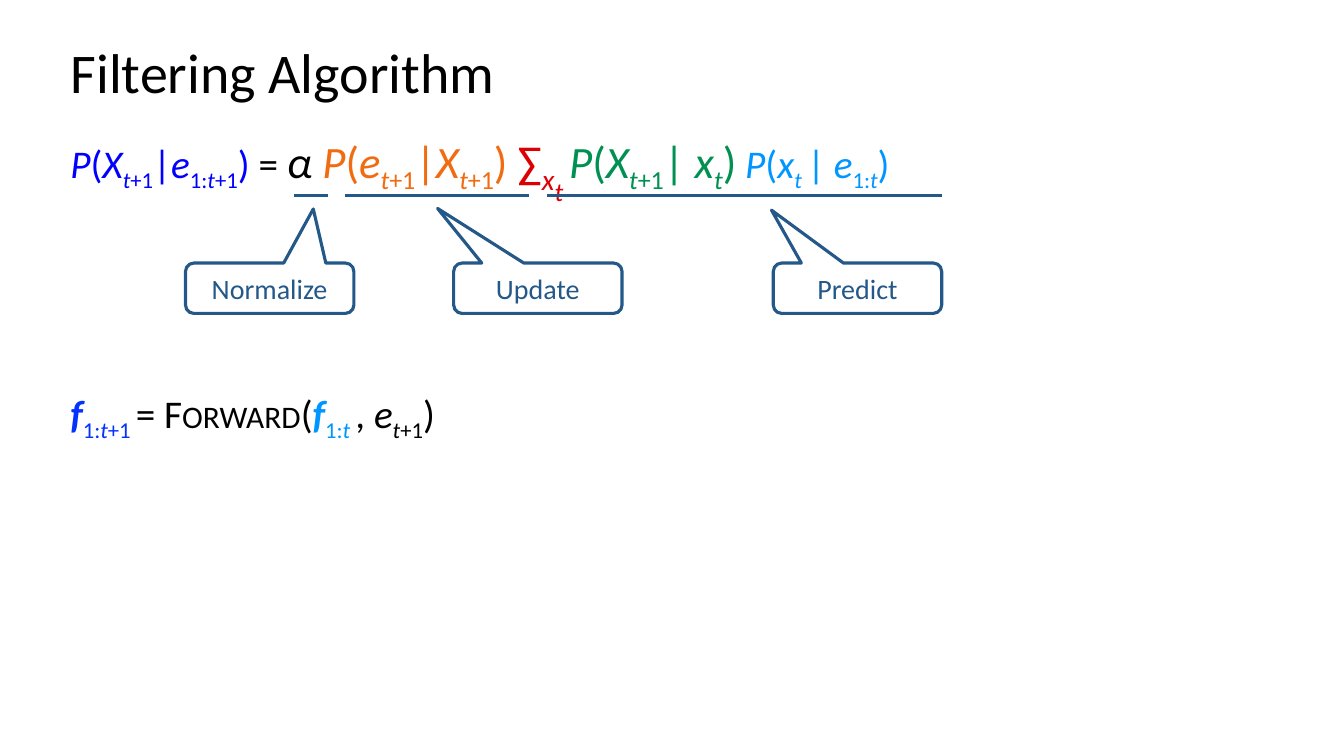
from dataclasses import dataclass
from itertools import groupby
from pptx import Presentation
from pptx.dml.color import RGBColor as RGB
from pptx.enum.shapes import MSO_CONNECTOR as LineKind, MSO_SHAPE as Preset
from pptx.enum.text import MSO_ANCHOR as Anchor, MSO_AUTO_SIZE as Fit, PP_ALIGN as Align
from pptx.oxml.ns import qn
from pptx.util import Inches, Pt


@dataclass(frozen=True)
class Theme:
    font: str = "Calibri"
    black: str = "000000"
    white: str = "FFFFFF"
    posterior: str = "0000FF"
    sensor: str = "F16C11"
    total: str = "DC0003"
    transition: str = "009051"
    prior: str = "0096FF"
    message: str = "0432FF"
    accent: str = "235888"
    title_size: int = 40
    index_size: int = 36
    large: int = 32
    body: int = 28
    label: int = 20
    stroke: float = 2.25


THEME = Theme()


@dataclass(frozen=True)
class Box:
    left: float
    top: float
    width: float
    height: float

    def inches(self):
        return [Inches(v) for v in (self.left, self.top, self.width, self.height)]


@dataclass(frozen=True)
class Term:
    """Part of a formula: letters are italic, [brackets] hold subscripts."""
    text: str
    colour: str = THEME.black
    size: int = THEME.body
    depth: int = -25
    bold: bool = False
    small_caps: bool = False


FILTER_UPDATE = [
    Term("P(X[t+1]|e[1:t+1]) ", THEME.posterior),
    Term("= "),
    Term("α ", size=THEME.large),
    Term("P(e[t+1]|X[t+1]) ", THEME.sensor, THEME.large),
    Term("∑", THEME.total, THEME.large),
    Term("[x]", THEME.total, THEME.index_size),
    Term("[t ]", THEME.total, THEME.large, depth=-51),
    Term("P(X[t+1]| x[t])", THEME.transition, THEME.large),
    Term(" P(x[t ]| e[1:t])", THEME.prior),
]
FORWARD_MESSAGE = [
    Term("f[1:t+1 ]", THEME.message, bold=True),
    Term("= "),
    Term("Forward", small_caps=True),
    Term("("),
    Term("f[1:t ]", THEME.prior, bold=True),
    Term(", e[t+1])"),
]

# Step, underline from and to, callout left, pointer offset (shares of callout)
STEPS = [
    ("Normalize", 2.32, 2.65, 1.24, (0.259, -1.573)),
    ("Update", 2.82, 4.65, 3.9, (-0.596, -1.585)),
    ("Predict", 4.83, 8.74, 7.07, (-0.511, -1.55)),
]


def style(run, size, colour):
    run.font.name = THEME.font
    run.font.size = Pt(size)
    run.font.color.rgb = RGB.from_string(colour)


def add_term(paragraph, term):
    # Odd pieces lie inside brackets
    for order, piece in enumerate(term.text.replace("]", "[").split("[")):
        subscript = order % 2 == 1
        for is_letter, chars in groupby(piece, str.isalpha):
            run = paragraph.add_run()
            run.text = "".join(chars)
            style(run, term.size, term.colour)
            run.font.italic = is_letter and not term.small_caps
            run.font.bold = term.bold and not subscript
            properties = run.font._element
            if subscript:
                properties.set("baseline", str(term.depth * 1000))
            if term.small_caps:
                properties.set("cap", "small")


def place_title(slide, box, text):
    title = slide.shapes.title
    title.left, title.top, title.width, title.height = box.inches()
    frame = title.text_frame
    frame.text = text
    frame.auto_size = Fit.NONE
    frame.vertical_anchor = Anchor.MIDDLE
    heading = frame.paragraphs[0]
    heading.alignment = Align.LEFT
    heading.line_spacing = 0.9
    style(heading.runs[0], THEME.title_size, THEME.black)


def place_formulas(slide, box):
    frame = slide.shapes.add_textbox(*box.inches()).text_frame
    frame.word_wrap = True
    # The wide second gap leaves room for the callouts
    for order, (terms, gap) in enumerate([(FILTER_UPDATE, 10), (FORWARD_MESSAGE, 137)]):
        formula = frame.add_paragraph() if order else frame.paragraphs[0]
        formula.line_spacing = 0.9
        formula.space_before = Pt(gap)
        for term in terms:
            add_term(formula, term)


def outline(line):
    line.color.rgb = RGB.from_string(THEME.accent)
    line.width = Pt(THEME.stroke)


def add_underline(slide, start, end, y):
    underline = slide.shapes.add_connector(
        LineKind.STRAIGHT, Inches(start), Inches(y), Inches(end), Inches(y))
    outline(underline.line)
    shape_properties = underline._element.spPr
    shape_properties.append(shape_properties.makeelement(qn("a:effectLst"), {}))


def add_callout(slide, box, step, pointer):
    callout = slide.shapes.add_shape(Preset.ROUNDED_RECTANGULAR_CALLOUT, *box.inches())
    callout.shadow.inherit = False
    callout.adjustments[0], callout.adjustments[1] = pointer
    callout.adjustments[2] = 0.167
    callout.fill.solid()
    callout.fill.fore_color.rgb = RGB.from_string(THEME.white)
    outline(callout.line)
    frame = callout.text_frame
    frame.text = step
    frame.vertical_anchor = Anchor.MIDDLE
    frame.paragraphs[0].alignment = Align.CENTER
    style(frame.paragraphs[0].runs[0], THEME.label, THEME.accent)


def place_steps(slide, box):
    for step, start, end, left, pointer in STEPS:
        add_underline(slide, box.left + start, box.left + end, box.top + 0.72)
        label_box = Box(box.left + left, box.top + 1.39, 1.67, 0.5)
        add_callout(slide, label_box, step, pointer)


def main():
    deck = Presentation()
    deck.slide_width, deck.slide_height = Inches(13.33), Inches(7.5)
    slide = deck.slides.add_slide(deck.slide_layouts[5])
    content = Box(0.6, 1.22, 11.5, 2.23)
    place_title(slide, Box(0.6, 0.4, 11.5, 0.69), "Filtering Algorithm")
    place_formulas(slide, content)
    place_steps(slide, content)
    deck.save("out.pptx")


if __name__ == "__main__":
    main()
